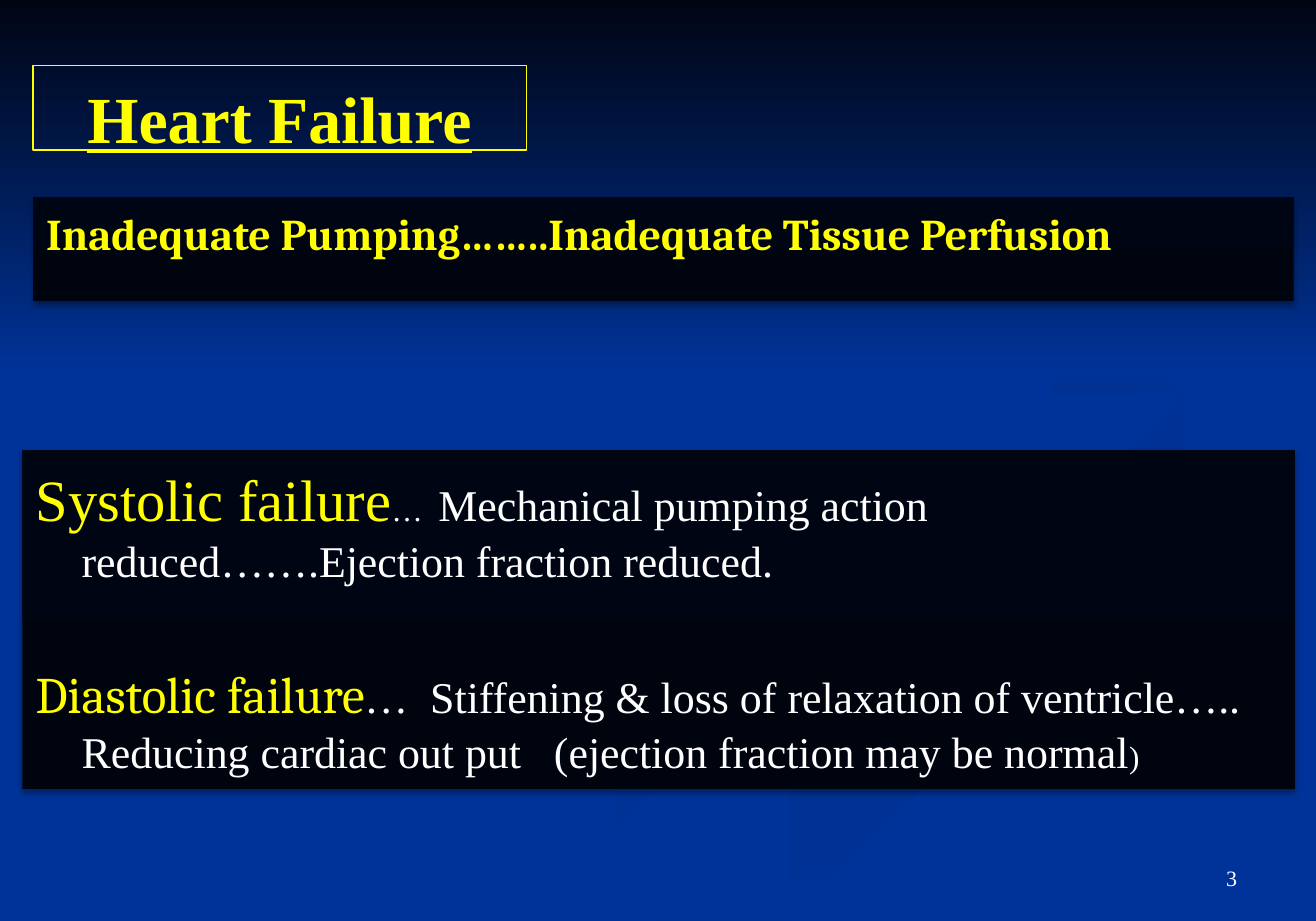
from dataclasses import dataclass

from lxml import etree
from pptx import Presentation
from pptx import util as u
from pptx.dml.color import RGBColor
from pptx.enum import shapes, text
from pptx.oxml import parse_xml
from pptx.oxml.ns import nsdecls, qn

TIMES, CAMBRIA = "Times New Roman", "Cambria"
YELLOW, WHITE, BLUE = "FFFF00", "FFFFFF", "003399"
PANEL_TOP, PANEL_BOTTOM = "000513", "00040F"
DOWN, UP, RIGHT = 270, 90, 0  # gradient directions


@dataclass
class Run:
    words: str
    size: float
    color: str = WHITE
    font: str = TIMES
    bold: bool = False
    underline: bool = False


@dataclass
class Paragraph:
    runs: list[Run]
    space_before: float = 0
    hanging: float = 0
    align: text.PP_ALIGN = text.PP_ALIGN.LEFT


@dataclass
class Box:
    left: float
    top: float
    width: float
    height: float
    margin_top: float
    paragraphs: list[Paragraph]


@dataclass
class Ribbon:
    start: str
    end: str
    angle: int
    points: list[tuple[float, float]]


RIBBONS = [
    # Lower left ribbon
    Ribbon(BLUE, "003193", RIGHT, [
        (7.81, 5.17), (7.85, 5.28), (7.74, 5.44), (7.27, 5.62), (6.52, 5.79),
        (5.79, 5.96), (4.99, 6.17), (4.17, 6.44), (3.38, 6.79), (3, 6.99),
        (3.61, 6.99), (4.31, 6.66), (4.99, 6.41), (5.64, 6.21), (6.23, 6.04),
        (6.99, 5.86), (7.56, 5.73), (7.91, 5.57), (8, 5.42), (7.95, 5.29)]),
    # Lower right ribbon
    Ribbon("002F8C", BLUE, DOWN, [
        (5.03, 6.99), (5.71, 6.99), (6, 6.84), (6.49, 6.63), (7.22, 6.36),
        (7.85, 6.17), (8.61, 5.98), (9.49, 5.78), (9.98, 5.69), (9.98, 5.42),
        (9.63, 5.54), (9.03, 5.7), (8.31, 5.87), (7.64, 6.04), (6.96, 6.24),
        (6.3, 6.47), (5.69, 6.71), (5.19, 6.97)]),
    # Upper crescent
    Ribbon("002F8E", BLUE, 315, [
        (7.62, 2.17), (8.05, 2.37), (8.46, 2.61), (8.76, 2.85), (8.88, 3.06),
        (8.88, 3.19), (8.76, 3.36), (8.52, 3.49), (8.18, 3.6), (7.33, 3.77),
        (6.49, 3.92), (5.97, 4.08), (5.77, 4.31), (5.9, 4.52), (6.22, 4.66),
        (5.97, 4.48), (5.96, 4.3), (6.35, 4.11), (6.83, 4.02), (7.64, 3.89),
        (8.25, 3.75), (8.67, 3.58), (8.89, 3.38), (8.94, 3.21), (8.86, 2.95),
        (8.64, 2.72), (8.21, 2.44), (7.8, 2.25)]),
]

TITLE = Box(0.25, 0.5, 3.75, 0.64, 0.09, [
    Paragraph([Run("Heart Failure", 36, YELLOW, bold=True, underline=True)],
              align=text.PP_ALIGN.CENTER)])

PANELS = [
    Box(0.17, 3.42, 9.67, 2.58, 0.1, [
        Paragraph([
            Run("Systolic failure", 32, YELLOW),
            Run("…  ", 17),
            Run("Mechanical pumping action reduced…….Ejection fraction reduced.", 24),
        ], hanging=0.35),
        Paragraph([
            Run("Diastolic failure", 28, YELLOW, CAMBRIA),
            Run("…  Stiffening & loss of relaxation of ventricle….. "
                "Reducing cardiac out put   (ejection fraction may be normal", 24),
            Run(")", 17),
        ], space_before=42, hanging=0.35)]),
    Box(0.25, 1.5, 9.58, 0.79, 0.07, [
        Paragraph([Run("Inadequate Pumping……..Inadequate Tissue Perfusion",
                       24, YELLOW, CAMBRIA, bold=True)])]),
]

PAGE_NUMBER = Box(7.17, 6.52, 2.33, 0.3, 0.05, [
    Paragraph([Run("3", 12)], align=text.PP_ALIGN.RIGHT)])


def paint(color_format, color: str) -> None:
    color_format.rgb = RGBColor.from_string(color)


def fill_gradient(shape, start: str, end: str, angle: int) -> None:
    shape.fill.gradient()
    shape.fill.gradient_angle = angle
    for stop, color, position in zip(shape.fill.gradient_stops, (start, end), (0, 1)):
        paint(stop.color, color)
        stop.position = position


def decorate(shape, start: str, end: str, angle: int) -> None:
    shape.shadow.inherit = False
    fill_gradient(shape, start, end, angle)
    shape.line.fill.background()


def add_ribbon(slide, ribbon: Ribbon) -> None:
    builder = slide.shapes.build_freeform(*ribbon.points[0], scale=u.Inches(1))
    builder.add_line_segments(ribbon.points[1:], close=True)
    decorate(builder.convert_to_shape(), ribbon.start, ribbon.end, ribbon.angle)


def add_soft_shadow(shape) -> None:
    shape.shadow.inherit = False
    effects = shape.element.spPr.find(qn("a:effectLst"))
    effects.append(parse_xml(
        f'<a:outerShdw {nsdecls("a")} blurRad="39370" dist="22860" dir="5400000" '
        'rotWithShape="0"><a:srgbClr val="000000"><a:alpha val="35000"/>'
        '</a:srgbClr></a:outerShdw>'))


def write_box(shape, box: Box) -> None:
    shape.left, shape.top = u.Inches(box.left), u.Inches(box.top)
    shape.width, shape.height = u.Inches(box.width), u.Inches(box.height)
    frame = shape.text_frame
    frame.word_wrap = True
    frame.auto_size = text.MSO_AUTO_SIZE.NONE
    frame.vertical_anchor = text.MSO_ANCHOR.TOP
    frame.margin_left = frame.margin_right = u.Inches(0.1)
    frame.margin_top, frame.margin_bottom = u.Inches(box.margin_top), 0
    for index, item in enumerate(box.paragraphs):
        paragraph = frame.add_paragraph() if index else frame.paragraphs[0]
        paragraph.alignment = item.align
        paragraph.line_spacing = 1.0
        paragraph.space_before = u.Pt(item.space_before)
        paragraph.space_after = u.Pt(0)
        properties = paragraph._p.get_or_add_pPr()
        properties.set("marL", str(u.Inches(item.hanging)))
        properties.set("indent", str(-u.Inches(item.hanging)))
        etree.SubElement(properties, qn("a:buNone"))
        for part in item.runs:
            run = paragraph.add_run()
            run.text = part.words
            run.font.name, run.font.size = part.font, u.Pt(part.size)
            run.font.bold, run.font.underline = part.bold, part.underline
            paint(run.font.color, part.color)


def main() -> None:
    presentation = Presentation()
    presentation.slide_width, presentation.slide_height = u.Inches(10), u.Inches(7)
    slide = presentation.slides.add_slide(presentation.slide_layouts[3])
    title, *bodies = slide.placeholders

    # Background
    slide.background.fill.solid()
    paint(slide.background.fill.fore_color, BLUE)
    for ribbon in RIBBONS:
        add_ribbon(slide, ribbon)
    sky = slide.shapes.add_shape(
        shapes.MSO_SHAPE.RECTANGLE, 0, 0, presentation.slide_width, u.Inches(2.88))
    decorate(sky, "000514", BLUE, DOWN)

    # Title, in front of the background
    slide.shapes.element.append(title.element)
    write_box(title, TITLE)
    paint(title.line.color, YELLOW)
    title.line.width = u.Pt(0.75)

    # Text panels
    for body, panel in zip(bodies, PANELS):
        slide.shapes.element.append(body.element)
        write_box(body, panel)
        fill_gradient(body, PANEL_BOTTOM, PANEL_TOP, UP)
        add_soft_shadow(body)

    # Page number
    write_box(slide.shapes.add_textbox(0, 0, 0, 0), PAGE_NUMBER)

    presentation.save("out.pptx")


if __name__ == "__main__":
    main()
